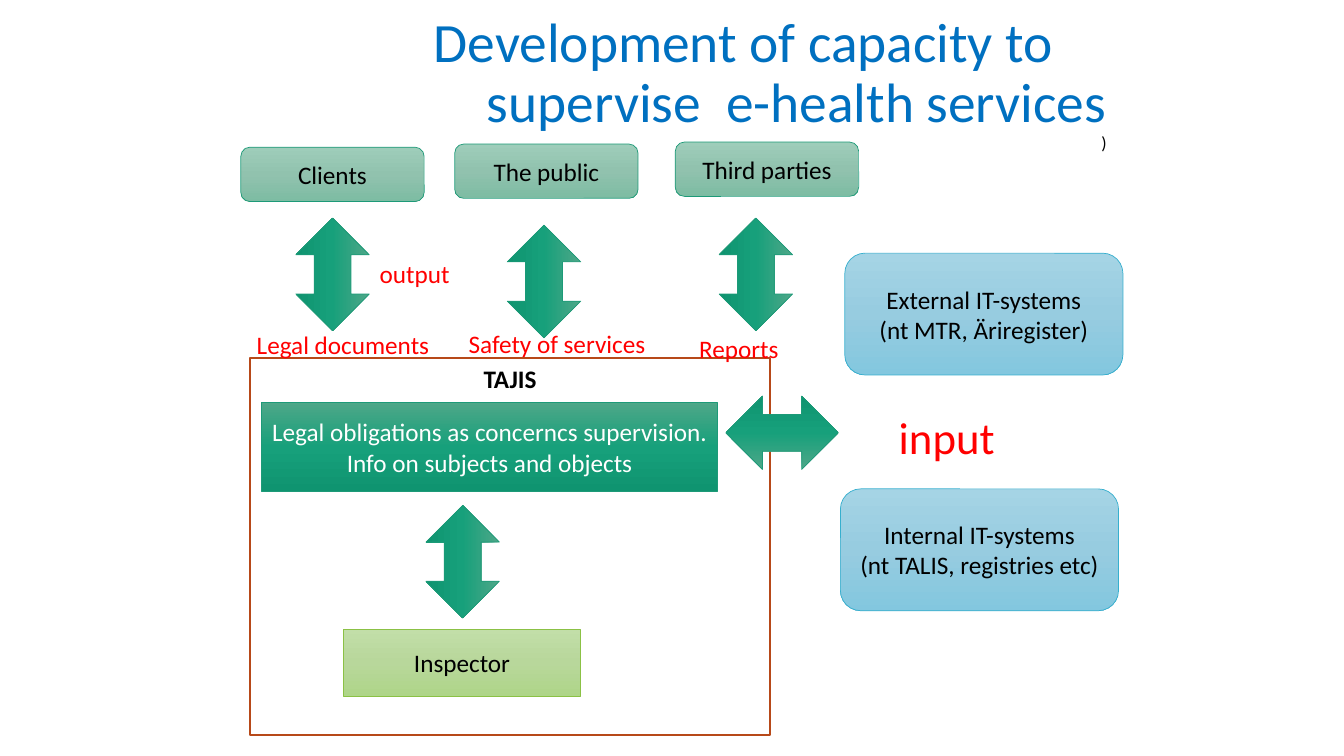
"""Build the slide on developing capacity to supervise e-health services."""
from copy import deepcopy

from pptx import Presentation
from pptx.dml.color import RGBColor
from pptx.enum.shapes import MSO_SHAPE
from pptx.enum.text import MSO_ANCHOR, PP_ALIGN
from pptx.oxml.ns import qn
from pptx.util import Cm, Pt

BLACK = RGBColor(0x00, 0x00, 0x00)
WHITE = RGBColor(0xFF, 0xFF, 0xFF)
RED = RGBColor(0xFF, 0x00, 0x00)
TITLE_BLUE = RGBColor(0x00, 0x70, 0xC0)
FRAME_BROWN = RGBColor(0xB7, 0x49, 0x19)
GREEN_LINE = RGBColor(0x1D, 0x9A, 0x78)
LIME_LINE = RGBColor(0x8B, 0xC1, 0x45)
BLUE_LINE = RGBColor(0x36, 0xAF, 0xCE)
GREEN = [RGBColor(0x4E, 0xA7, 0x88), RGBColor(0x17, 0xA0, 0x7B), RGBColor(0x0F, 0x94, 0x70)]
PALE_GREEN = [RGBColor(0x9E, 0xCD, 0xBA), RGBColor(0x91, 0xC2, 0xAE), RGBColor(0x7D, 0xBC, 0xA3)]
LIME = [RGBColor(0xC2, 0xDE, 0xA8), RGBColor(0xB8, 0xD7, 0x9B), RGBColor(0xAE, 0xD5, 0x88)]
BLUE = [RGBColor(0xA5, 0xD4, 0xE5), RGBColor(0x97, 0xCC, 0xE0), RGBColor(0x83, 0xC7, 0xDF)]

presentation = Presentation()
presentation.slide_width = Cm(33.87)
presentation.slide_height = Cm(19.05)
slide = presentation.slides.add_slide(presentation.slide_layouts[6])


def write(shape, text, size=18, color=BLACK, bold=False, align=PP_ALIGN.CENTER,
          anchor=MSO_ANCHOR.MIDDLE, wrap=True):
    frame = shape.text_frame
    frame.word_wrap = wrap
    frame.vertical_anchor = anchor
    frame.text = text
    for paragraph in frame.paragraphs:
        paragraph.alignment = align
        paragraph.font.name = "Calibri"
        paragraph.font.size = Pt(size)
        paragraph.font.bold = bold
        paragraph.font.color.rgb = color
    return frame.paragraphs


def add_block(kind, left, top, width, height, colors, line_color):
    shape = slide.shapes.add_shape(kind, Cm(left), Cm(top), Cm(width), Cm(height))
    shape.shadow.inherit = False
    shape.line.color.rgb = line_color
    shape.line.width = Pt(0.5)
    shape.fill.gradient()
    shape.fill.gradient_angle = 270
    stop_list = shape._element.spPr.find(qn("a:gradFill")).find(qn("a:gsLst"))
    stop_list.insert(1, deepcopy(stop_list[0]))
    for stop, color, position in zip(shape.fill.gradient_stops, colors, (0, 0.5, 1)):
        stop.color.rgb = color
        stop.position = position
    return shape


system_frame = slide.shapes.add_shape(MSO_SHAPE.RECTANGLE, Cm(6.3), Cm(9.02), Cm(13.11), Cm(9.5))
system_frame.shadow.inherit = False
system_frame.fill.solid()
system_frame.fill.fore_color.rgb = WHITE
system_frame.line.color.rgb = FRAME_BROWN
system_frame.line.width = Pt(1)
write(system_frame, "TAJIS", bold=True, anchor=MSO_ANCHOR.TOP)

title = slide.shapes.add_textbox(Cm(5.28), Cm(0.53), Cm(22.86), Cm(3.18))
title_lines = write(title, "Development of capacity to\nsupervise  e-health services\n)",
                    size=39.6, color=TITLE_BLUE, align=PP_ALIGN.RIGHT)
for paragraph in title_lines:
    paragraph.line_spacing = 0.9
title_lines[0].alignment = PP_ALIGN.LEFT
title_lines[0]._p.get_or_add_pPr().set("marL", str(Cm(5.4)))
title_lines[2].font.size = Pt(12.6)
title_lines[2].font.color.rgb = BLACK

inspector = add_block(MSO_SHAPE.RECTANGLE, 8.66, 15.85, 5.97, 1.7, LIME, LIME_LINE)
write(inspector, "Inspector")
obligations = add_block(MSO_SHAPE.RECTANGLE, 6.6, 10.13, 11.48, 2.26, GREEN, GREEN_LINE)
write(obligations, "Legal obligations as concerncs supervision. Info on subjects and objects",
      color=WHITE)

for text, left, top in [("Clients", 6.07, 3.71), ("The public", 11.46, 3.63),
                        ("Third parties", 17.02, 3.58)]:
    audience = add_block(MSO_SHAPE.ROUNDED_RECTANGLE, left, top, 4.62, 1.37,
                         PALE_GREEN, GREEN_LINE)
    write(audience, text)

for text, left, top in [("Internal IT-systems\n(nt TALIS, registries etc)", 21.18, 12.32),
                        ("External IT-systems\n(nt MTR, Äriregister)", 21.29, 6.38)]:
    it_system = add_block(MSO_SHAPE.ROUNDED_RECTANGLE, left, top, 7.01, 3.07, BLUE, BLUE_LINE)
    write(it_system, text)

for left, top, rotation in [(10.24, 13.23, 90), (18.29, 9.98, 180), (17.63, 5.99, 90),
                            (12.29, 6.17, 90), (6.96, 5.99, 90)]:
    arrow = add_block(MSO_SHAPE.LEFT_RIGHT_ARROW, left, top, 2.84, 1.85, GREEN, GREEN_LINE)
    arrow.rotation = rotation

input_label = slide.shapes.add_textbox(Cm(19.63), Cm(10.21), Cm(8.46), Cm(1.63))
write(input_label, "input", size=32, color=RED, anchor=MSO_ANCHOR.TOP)

for text, left, top, width in [("Legal documents", 6.22, 8.18, 4.9),
                               ("Safety of services", 11.56, 8.15, 5),
                               ("Reports", 17.37, 8.28, 2.54),
                               ("output", 9.32, 6.38, 2.44)]:
    label = slide.shapes.add_textbox(Cm(left), Cm(top), Cm(width), Cm(1.02))
    write(label, text, color=RED, align=PP_ALIGN.LEFT, anchor=MSO_ANCHOR.TOP, wrap=False)

presentation.save("out.pptx")
